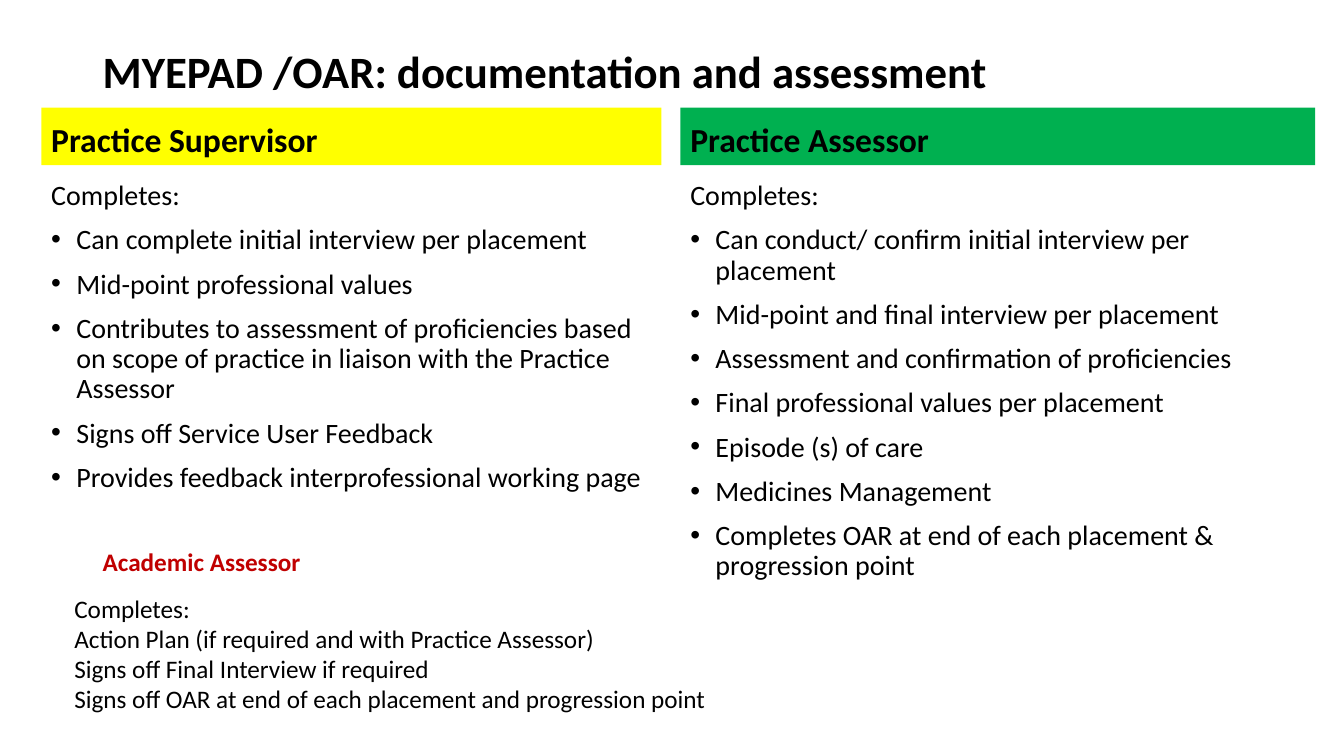
from dataclasses import dataclass

from lxml import etree
from pptx import Presentation
from pptx.dml.color import RGBColor
from pptx.enum.shapes import MSO_SHAPE
from pptx.enum.text import MSO_ANCHOR, PP_ALIGN
from pptx.oxml.ns import qn
from pptx.util import Pt

RECT = MSO_SHAPE.RECTANGLE
TOP, MIDDLE, BOTTOM = MSO_ANCHOR.TOP, MSO_ANCHOR.MIDDLE, MSO_ANCHOR.BOTTOM
LEFT = PP_ALIGN.LEFT

BLACK = RGBColor(0x00, 0x00, 0x00)
YELLOW = RGBColor(0xFF, 0xFF, 0x00)
GREEN = RGBColor(0x00, 0xB0, 0x50)
RED = RGBColor(0xC0, 0x00, 0x00)

FONT = "Calibri"
INDENT = 18
HEAD_TOP, HEAD_HIGH = 77, 41
LIST_TOP, LIST_HIGH = 126, 361.5


@dataclass
class Box:
    left: float
    top: float
    width: float
    height: float


@dataclass
class Style:
    size: float
    color: RGBColor = BLACK
    bold: bool = False
    anchor: MSO_ANCHOR = TOP
    line: float = 1.0
    gap: float = 0


@dataclass
class Role:
    name: str
    fill: RGBColor
    left: float
    width: float
    tasks: list[str]


TITLE = Style(32, bold=True, anchor=MIDDLE, line=0.9)
HEAD = Style(24, bold=True, anchor=BOTTOM, line=0.9)
BODY = Style(20, line=0.9, gap=10)
LABEL = Style(18, color=RED, bold=True, anchor=BOTTOM)
NOTE = Style(18, anchor=BOTTOM)

ROLES = [
    Role("Practice Supervisor", YELLOW, 29.5, 443, [
        "Can complete initial interview per placement",
        "Mid-point professional values",
        "Contributes to assessment of proficiencies based on scope of "
        "practice in liaison with the Practice Assessor",
        "Signs off Service User Feedback",
        "Provides feedback interprofessional working page",
    ]),
    Role("Practice Assessor", GREEN, 486, 453.5, [
        "Can conduct/ confirm initial interview per placement",
        "Mid-point and final interview per placement",
        "Assessment and confirmation of proficiencies",
        "Final professional values per placement",
        "Episode (s) of care",
        "Medicines Management",
        "Completes OAR at end of each placement & progression point",
    ]),
]

ACADEMIC = [
    "Completes:",
    "Action Plan (if required and with Practice Assessor)",
    "Signs off Final Interview if required",
    "Signs off OAR at end of each placement and progression point",
]


def add_bullet(para) -> None:
    props = para._p.get_or_add_pPr()
    props.set("marL", str(Pt(INDENT)))
    props.set("indent", str(-Pt(INDENT)))
    etree.SubElement(props, qn("a:buFont")).set("typeface", "Arial")
    etree.SubElement(props, qn("a:buChar")).set("char", "•")


def write(shape, lines: list[str], style: Style, bullets: bool = False) -> None:
    """Fill the shape with lines; bullets start at the second line."""
    frame = shape.text_frame
    frame.text = "\n".join(lines)
    frame.word_wrap = True
    frame.vertical_anchor = style.anchor
    for index, para in enumerate(frame.paragraphs):
        if bullets and index:
            add_bullet(para)
        para.alignment = LEFT
        para.line_spacing = style.line
        para.space_before = Pt(style.gap if index else 0)
        for run in para.runs:
            run.font.name = FONT
            run.font.size = Pt(style.size)
            run.font.bold = style.bold
            run.font.color.rgb = style.color


def place(box: Box) -> tuple[Pt, Pt, Pt, Pt]:
    return Pt(box.left), Pt(box.top), Pt(box.width), Pt(box.height)


def add_text(slide, box: Box, lines: list[str], style: Style,
             bullets: bool = False) -> None:
    write(slide.shapes.add_textbox(*place(box)), lines, style, bullets)


def add_role(slide, role: Role) -> None:
    head = Box(role.left, HEAD_TOP, role.width, HEAD_HIGH)
    bar = slide.shapes.add_shape(RECT, *place(head))
    bar.shadow.inherit = False
    bar.fill.solid()
    bar.fill.fore_color.rgb = role.fill
    bar.line.fill.background()
    write(bar, [role.name], HEAD)
    tasks = Box(role.left, LIST_TOP, role.width, LIST_HIGH)
    add_text(slide, tasks, ["Completes:", *role.tasks], BODY, bullets=True)


def main() -> None:
    deck = Presentation()
    deck.slide_width, deck.slide_height = Pt(960), Pt(540)
    slide = deck.slides.add_slide(deck.slide_layouts[6])
    add_text(slide, Box(66.25, 29, 828, 48),
             ["MYEPAD /OAR: documentation and assessment"], TITLE)
    for role in ROLES:
        add_role(slide, role)
    add_text(slide, Box(66.25, 255.5, 491, 160), ["Academic Assessor"], LABEL)
    add_text(slide, Box(46, 222.5, 674, 291), ACADEMIC, NOTE)
    deck.save("out.pptx")


if __name__ == "__main__":
    main()
